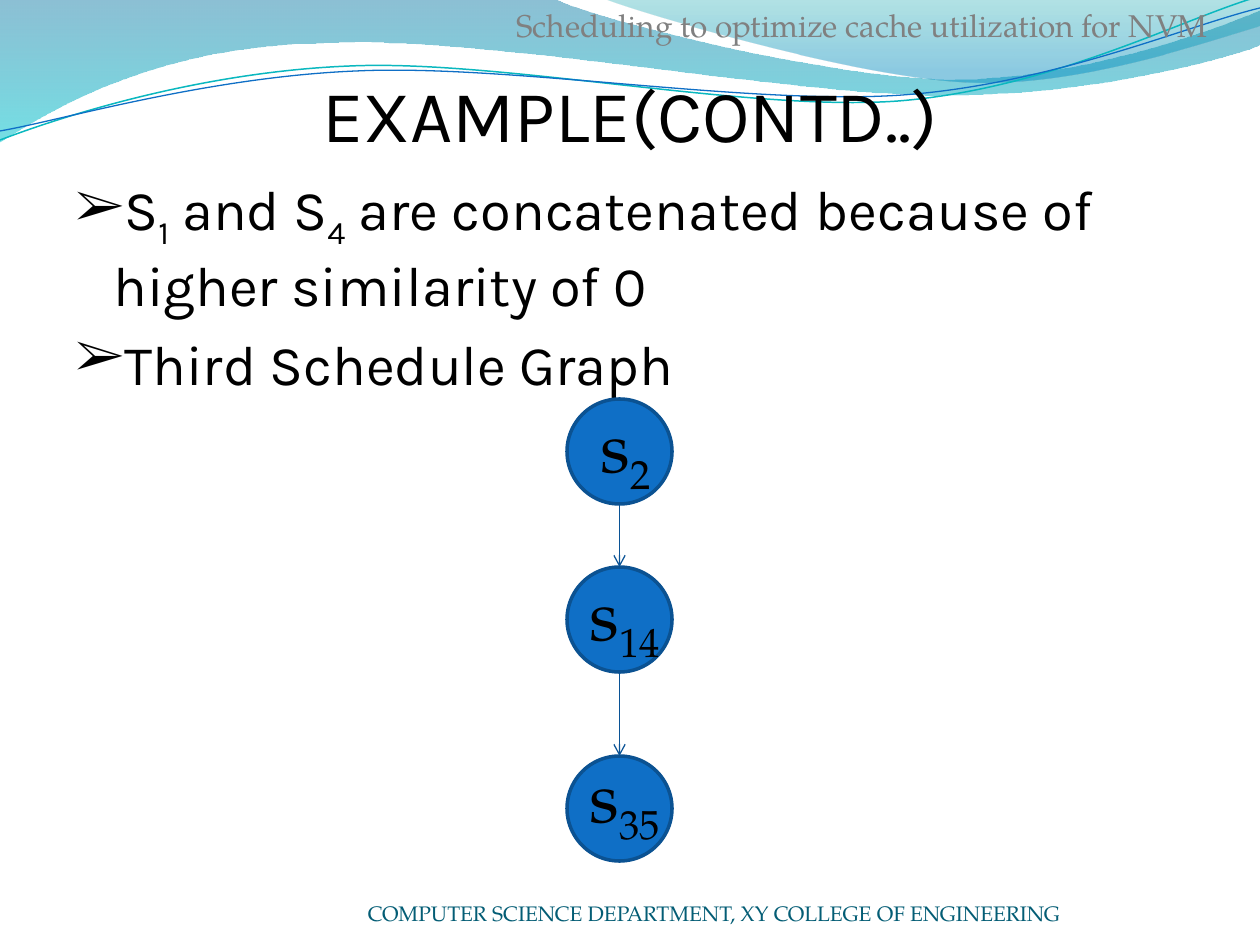
from lxml.etree import SubElement
from pptx import Presentation
from pptx.dml.color import RGBColor
from pptx.enum.shapes import MSO_CONNECTOR, MSO_SHAPE
from pptx.enum.text import MSO_ANCHOR, PP_ALIGN
from pptx.oxml import parse_xml
from pptx.oxml.ns import nsdecls, qn
from pptx.util import Pt

PX = 914400 / 126
W, H = 1260, 945
SERIF, SANS = "TeX Gyre Pagella", "Karla"

BANDS = [
    ([(0, 0), (554, -1), (600, 21, 837, 79, 955, 79), (1075, 79, 1207, 33, 1260, 11),
      (1261, 45), (1238, 55, 1096, 96, 940, 95), (784, 95, 481, 35, 324, 43),
      (163, 45, 58, 105, -1, 142), (0, 0)],
     [(0, "0074A1", 45), (100, "00C6CF", 55)]),
    ([(604, -1), (641, 14, 859, 78, 969, 82), (1079, 87, 1211, 40, 1260, 26), (1260, 0),
      (604, -1)],
     [(0, "00A1A9", 30), (80, "008BBF", 45)]),
]
WAVES = [
    ([(0, 140), (60, 117, 199, 72, 349, 66), (498, 59, 747, 112, 898, 101),
      (1050, 89, 1182, 19, 1257, -3)], "0AB8BF", 0.85),
    ([(0, 131), (59, 121, 207, 77, 357, 71), (508, 64, 751, 106, 903, 95),
      (1053, 84, 1186, 26, 1260, 8)], "0F6FC6", 0.75),
]
TITLE = "EXAMPLE(CONTD..)"
BULLETS = [
    [("S", 0), ("1", -25), (" and S", 0), ("4", -25),
     (" are concatenated because of higher similarity of 0", 0)],
    [("Third Schedule Graph", 0)],
]
FOOTER = "COMPUTER SCIENCE DEPARTMENT, XY COLLEGE OF ENGINEERING"
HEADER = "Scheduling to optimize cache utilization for NVM"
NODE_X, NODE_D = 567, 105
NODES = [(756, "35", (577, 746, 189, 97)), (567, "14", (577, 564, 231, 97)),
         (399, "2", (588, 396, 147, 97))]


def px(n):
    """Convert px to EMU."""
    return round(n * PX)


def rgb(color):
    """Convert a hex string to a colour."""
    return RGBColor.from_string(color)


def outline(s, steps, close):
    """Draw an outline whose steps hold 2 numbers for a line or 6 for a cubic curve."""
    pts = [(px(a), px(b)) for step in steps for a, b in zip(step[::2], step[1::2])]
    fb = s.shapes.build_freeform(*pts[0])
    fb.add_line_segments(pts[1:], close=close)
    sp = fb.convert_to_shape()
    sp.shadow.inherit = False
    lines = iter(list(sp._element.iter(qn("a:lnTo"))))
    for step in steps[1:]:
        first = next(lines)
        if len(step) == 6:
            first.tag = qn("a:cubicBezTo")
            for _ in range(2):
                extra = next(lines)
                first.append(extra[0])
                extra.getparent().remove(extra)
    return sp


def band(s, steps, stops):
    """Draw a band with a translucent vertical gradient."""
    sp = outline(s, steps, True)
    sp.line.fill.background()
    gs = "".join(f'<a:gs pos="{pos * 1000}"><a:srgbClr val="{c}">'
                 f'<a:alpha val="{alpha * 1000}"/></a:srgbClr></a:gs>' for pos, c, alpha in stops)
    sp._element.spPr.find(qn("a:custGeom")).addnext(parse_xml(
        f'<a:gradFill {nsdecls("a")}><a:gsLst>{gs}</a:gsLst>'
        '<a:lin ang="5400000" scaled="0"/></a:gradFill>'))


def wave(s, steps, color, width):
    """Draw an open curved line."""
    sp = outline(s, steps, False)
    sp.fill.background()
    sp.line.color.rgb = rgb(color)
    sp.line.width = Pt(width)


def text(s, box, paras, size, font, color, anchor=MSO_ANCHOR.TOP, inset=None,
         align=PP_ALIGN.LEFT, bullet=None):
    """Add a text box with paragraphs of (text, baseline) runs."""
    tf = s.shapes.add_textbox(*map(px, box)).text_frame
    tf.word_wrap = True
    tf.vertical_anchor = anchor
    if inset:
        tf.margin_left, tf.margin_top, tf.margin_right, tf.margin_bottom = map(px, inset)
    for i, runs in enumerate(paras):
        p = tf.paragraphs[0] if i == 0 else tf.add_paragraph()
        p.alignment = align
        if bullet:
            p.space_before = Pt(size * 0.2)
            pPr = p._p.get_or_add_pPr()
            pPr.set("marL", str(px(38)))
            pPr.set("indent", str(-px(38)))
            SubElement(pPr, qn("a:buSzPct")).set("val", "95000")
            SubElement(pPr, qn("a:buFont")).set("typeface", SERIF)
            SubElement(pPr, qn("a:buChar")).set("char", bullet)
        for words, base in runs:
            r = p.add_run()
            r.text = words
            r.font.size = Pt(size)
            r.font.name = font
            r.font.color.rgb = rgb(color)
            if base:
                r._r.get_or_add_rPr().set("baseline", str(base * 1000))


def node(s, y):
    """Draw one schedule node."""
    sp = s.shapes.add_shape(MSO_SHAPE.OVAL, *map(px, (NODE_X, y, NODE_D, NODE_D)))
    sp.shadow.inherit = False
    sp.fill.solid()
    sp.fill.fore_color.rgb = rgb("0F6FC6")
    sp.line.color.rgb = rgb("0B5292")
    sp.line.width = Pt(2)


def arrow(s, top, bottom):
    """Draw a downward arrow between two nodes."""
    x = px(NODE_X + NODE_D / 2)
    c = s.shapes.add_connector(MSO_CONNECTOR.STRAIGHT, x, px(top), x, px(bottom))
    c.line.color.rgb = rgb("095295")
    c.line.width = Pt(0.75)
    SubElement(c.line._get_or_add_ln(), qn("a:tailEnd")).set("type", "arrow")
    SubElement(c._element.spPr, qn("a:effectLst"))


def main():
    """Build the slide."""
    prs = Presentation()
    prs.slide_width, prs.slide_height = px(W), px(H)
    s = prs.slides.add_slide(prs.slide_layouts[6])
    for steps, stops in BANDS:
        band(s, steps, stops)
    for steps, color, width in WAVES:
        wave(s, steps, color, width)
    text(s, (63, 0, 1134, 157), [[(TITLE, 0)]], 42, SANS, "000000", MSO_ANCHOR.BOTTOM,
         (0, 6, 0, 0), PP_ALIGN.CENTER)
    text(s, (63, 168, 1134, 703), BULLETS, 32, SANS, "000000", bullet="➢")
    text(s, (368, 876, 735, 50), [[(FOOTER, 0)]], 12, SERIF, "045D75", MSO_ANCHOR.BOTTOM,
         (0, 0, 0, 0))
    for y, _, _ in NODES:
        node(s, y)
    for (below, _, _), (y, _, _) in reversed(list(zip(NODES, NODES[1:]))):
        arrow(s, y + NODE_D, below)
    for _, index, box in reversed(NODES):
        text(s, box, [[("s", 0), (index, -25)]], 40, SERIF, "000000")
    text(s, (504, 0, 813, 50), [[(HEADER, 0)]], 18, SERIF, "808080")
    prs.save("out.pptx")


if __name__ == "__main__":
    main()
